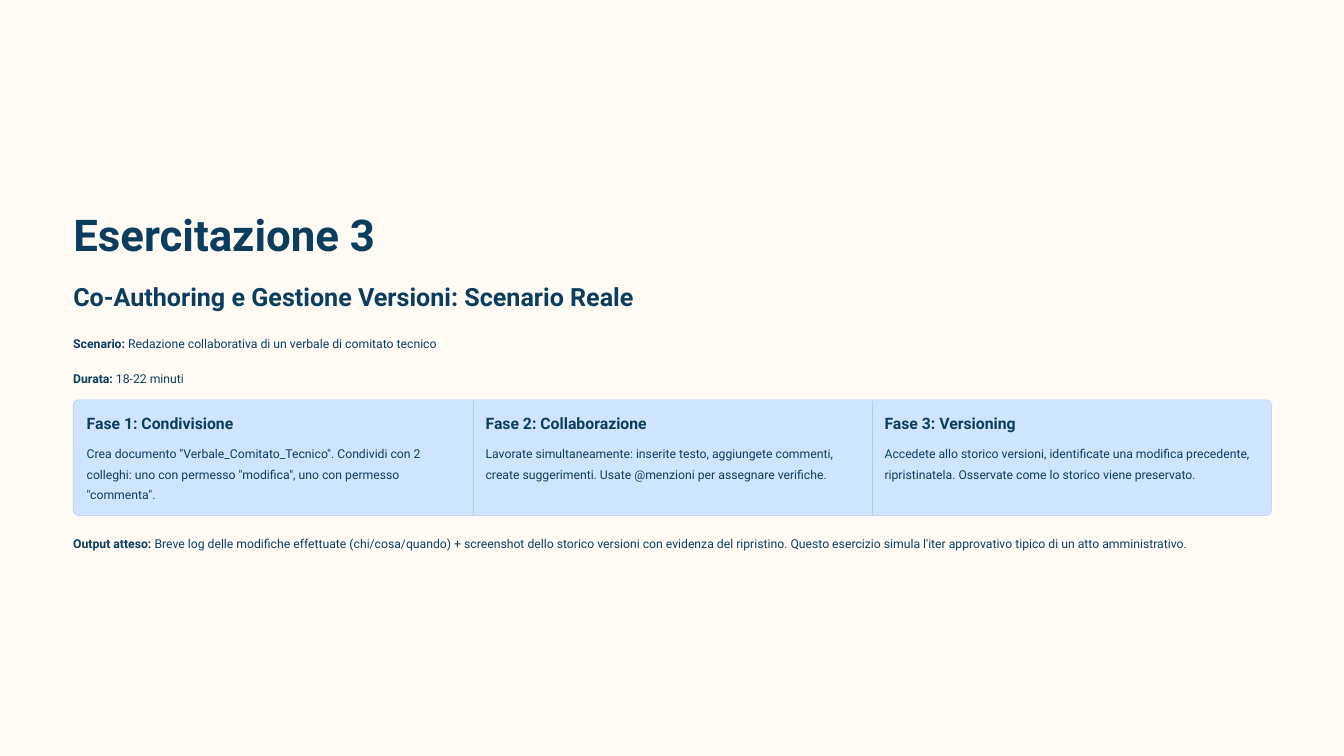
from dataclasses import dataclass

from lxml import etree
from pptx import Presentation
from pptx.dml.color import RGBColor
from pptx.enum.shapes import MSO_CONNECTOR, MSO_SHAPE
from pptx.enum.text import MSO_ANCHOR, MSO_AUTO_SIZE, PP_ALIGN
from pptx.oxml.ns import qn
from pptx.util import Inches, Pt


@dataclass(frozen=True)
class TextStyle:
    size: float
    leading: float
    bold: bool = False


@dataclass(frozen=True)
class Theme:
    font: str = "Roboto"
    ink: RGBColor = RGBColor(0x0B, 0x3E, 0x5D)
    paper: RGBColor = RGBColor(0xFF, 0xFA, 0xF4)
    panel: RGBColor = RGBColor(0xCE, 0xE5, 0xFD)
    rule: RGBColor = RGBColor(0xB4, 0xCB, 0xE3)
    title: TextStyle = TextStyle(46.9, 58.8, True)
    subtitle: TextStyle = TextStyle(26.9, 33.8, True)
    heading: TextStyle = TextStyle(16.9, 21.2, True)
    body: TextStyle = TextStyle(13.1, 21.9)


THEME = Theme()
LEFT, WIDTH = 1.09, 17.83

PHASES = [
    ("Fase 1: Condivisione",
     'Crea documento "Verbale_Comitato_Tecnico". Condividi con 2 colleghi: '
     'uno con permesso "modifica", uno con permesso "commenta".'),
    ("Fase 2: Collaborazione",
     "Lavorate simultaneamente: inserite testo, aggiungete commenti, "
     "create suggerimenti. Usate @menzioni per assegnare verifiche."),
    ("Fase 3: Versioning",
     "Accedete allo storico versioni, identificate una modifica precedente, "
     "ripristinatela. Osservate come lo storico viene preservato."),
]

# Labelled lines: top, bold label, text
NOTES = [
    (4.92, "Scenario:", " Redazione collaborativa di un verbale di comitato tecnico"),
    (5.44, "Durata:", " 18-22 minuti"),
    (7.89, "Output atteso:",
     " Breve log delle modifiche effettuate (chi/cosa/quando) + screenshot dello "
     "storico versioni con evidenza del ripristino. Questo esercizio simula l'iter "
     "approvativo tipico di un atto amministrativo."),
]


def write(shape, style, *texts, wrap=False):
    """Set one paragraph in the shape and return its runs."""
    frame = shape.text_frame
    frame.margin_left = frame.margin_top = frame.margin_right = frame.margin_bottom = 0
    frame.auto_size = MSO_AUTO_SIZE.NONE
    frame.word_wrap = wrap
    frame.vertical_anchor = MSO_ANCHOR.TOP
    para = frame.paragraphs[0]
    para.alignment = PP_ALIGN.LEFT
    para.line_spacing = Pt(style.leading)
    para.space_before = Pt(0)
    para.font.name = THEME.font
    para.font.size = Pt(style.size)
    para.font.bold = style.bold
    para.font.color.rgb = THEME.ink
    spans = []
    for text in texts:
        span = para.add_run()
        span.text = text
        spans.append(span)
    return spans


def add_text(page, box, style, *texts, wrap=False):
    shape = page.shapes.add_textbox(*map(Inches, box))
    return write(shape, style, *texts, wrap=wrap)


def fill_placeholder(shape, box, style, text):
    shape.left, shape.top, shape.width, shape.height = map(Inches, box)
    write(shape, style, text)


def add_panel(page, kind, box, radius=None, outlined=False):
    shape = page.shapes.add_shape(kind, *map(Inches, box))
    shape.shadow.inherit = False
    shape.fill.solid()
    shape.fill.fore_color.rgb = THEME.panel
    if radius is not None:
        shape.adjustments[0] = radius
    if outlined:
        shape.line.color.rgb = THEME.rule
        shape.line.width = Pt(0.6)
    else:
        shape.line.fill.background()


def add_divider(page, x, top, height):
    line = page.shapes.add_connector(
        MSO_CONNECTOR.STRAIGHT, Inches(x), Inches(top), Inches(x), Inches(top + height))
    line.line.color.rgb = THEME.rule
    line.line.width = Pt(1.2)
    etree.SubElement(line._element.spPr, qn("a:effectLst"))


def add_header(page):
    fill_placeholder(page.shapes.title, (LEFT, 3.06, 6.55, 0.82),
                     THEME.title, "Esercitazione 3")
    fill_placeholder(page.placeholders[1], (LEFT, 4.16, 8.48, 0.47),
                     THEME.subtitle, "Co-Authoring e Gestione Versioni: Scenario Reale")


def add_note(page, top, label, text):
    label_span, _ = add_text(page, (LEFT, top, WIDTH, 0.3), THEME.body, label, text)
    label_span.font.bold = True


def add_phase(page, box, heading, text, first):
    left, top, width, height = box
    pad = 0.19
    if first:
        add_panel(page, MSO_SHAPE.ROUNDED_RECTANGLE, box, radius=0.047)
    else:
        add_panel(page, MSO_SHAPE.RECTANGLE, box)
        add_divider(page, left + 0.01, top, height)
    inner = width - 2 * pad
    add_text(page, (left + pad, top + pad, inner, 0.3), THEME.heading, heading)
    add_text(page, (left + pad, top + 0.6, inner, 0.91), THEME.body, text, wrap=True)


def add_phases(page, box):
    left, top, width, height = box
    inset = 0.01
    add_panel(page, MSO_SHAPE.ROUNDED_RECTANGLE, box, radius=0.046, outlined=True)
    column = (width - 2 * inset) / len(PHASES)
    for index, (heading, text) in enumerate(PHASES):
        cell = (left + inset + index * column, top + inset, column, height - 2 * inset)
        add_phase(page, cell, heading, text, first=index == 0)


def main():
    deck = Presentation()
    deck.slide_width, deck.slide_height = Inches(20), Inches(11.25)
    page = deck.slides.add_slide(deck.slide_layouts[0])
    page.background.fill.solid()
    page.background.fill.fore_color.rgb = THEME.paper

    add_header(page)
    for note in NOTES:
        add_note(page, *note)
    add_phases(page, (LEFT, 5.95, WIDTH, 1.72))
    deck.save("out.pptx")


if __name__ == "__main__":
    main()
